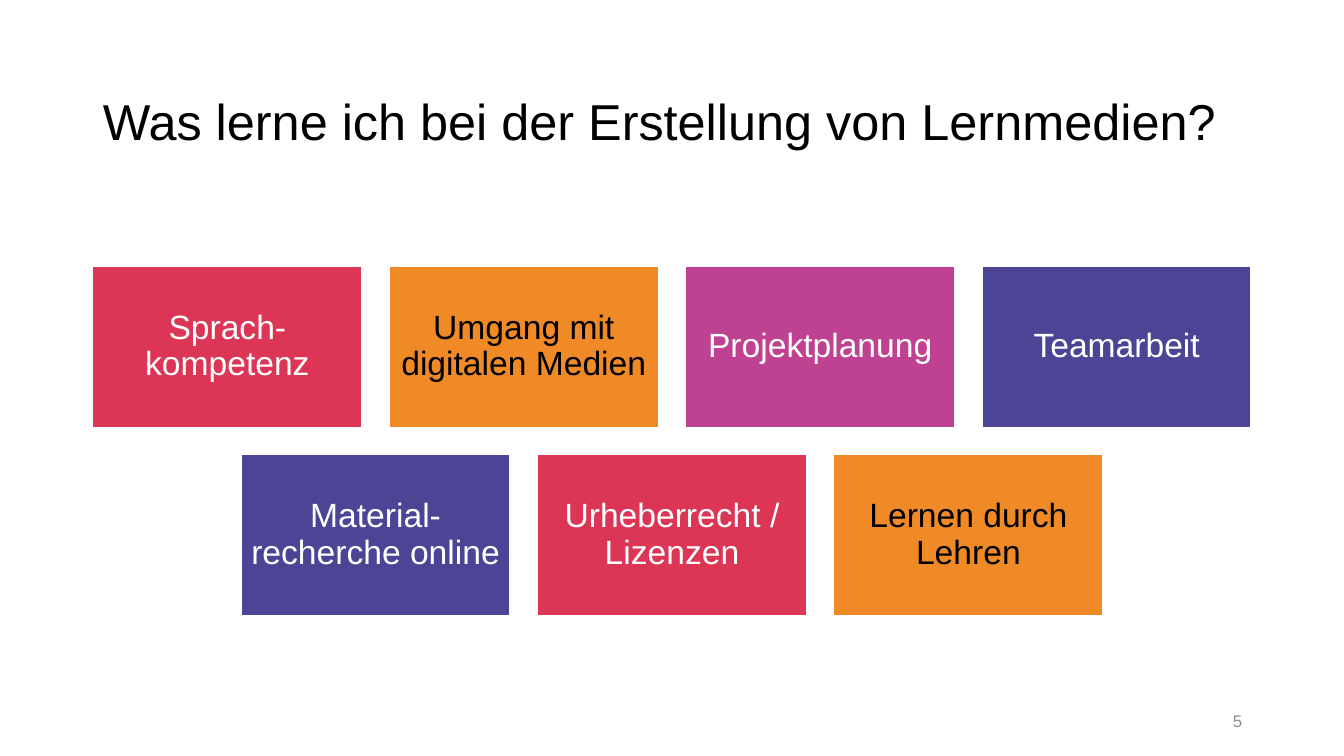
from dataclasses import dataclass

from pptx import Presentation
from pptx.dml.color import RGBColor
from pptx.enum.shapes import MSO_SHAPE
from pptx.enum.text import MSO_ANCHOR, MSO_AUTO_SIZE, PP_ALIGN
from pptx.util import Inches, Pt

RECTANGLE = MSO_SHAPE.RECTANGLE
MIDDLE = MSO_ANCHOR.MIDDLE
NO_AUTO_SIZE = MSO_AUTO_SIZE.NONE
LEFT, CENTER, RIGHT = PP_ALIGN.LEFT, PP_ALIGN.CENTER, PP_ALIGN.RIGHT

FONT = "Arial"
BLACK, WHITE, GREY = "000000", "FFFFFF", "8C8C8C"
RED, ORANGE, MAGENTA, VIOLET = "DC3555", "EF8A26", "BF4191", "4C4596"

SLIDE_WIDTH, SLIDE_HEIGHT = 13.33, 7.5
CARD_WIDTH, CARD_HEIGHT = 2.67, 1.6
GAP = 0.27
GRID_TOP = 2.64


@dataclass(frozen=True)
class Card:
    text: str
    fill: str
    text_color: str = WHITE


CARD_ROWS = [
    [
        Card("Sprach-kompetenz", RED),
        Card("Umgang mit digitalen Medien", ORANGE, BLACK),
        Card("Projektplanung", MAGENTA),
        Card("Teamarbeit", VIOLET),
    ],
    [
        Card("Material-recherche online", VIOLET),
        Card("Urheberrecht / Lizenzen", RED),
        Card("Lernen durch Lehren", ORANGE, BLACK),
    ],
]


def rgb(color: str) -> RGBColor:
    return RGBColor.from_string(color)


def write_text(shape, text: str, size: float, color: str, alignment,
               line_spacing: float = 1.0) -> None:
    frame = shape.text_frame
    frame.word_wrap = True
    frame.auto_size = NO_AUTO_SIZE
    frame.vertical_anchor = MIDDLE
    paragraph = frame.paragraphs[0]
    paragraph.alignment = alignment
    paragraph.line_spacing = line_spacing
    run = paragraph.add_run()
    run.text = text
    run.font.name = FONT
    run.font.size = Pt(size)
    run.font.color.rgb = rgb(color)


def add_title(slide, text: str) -> None:
    title = slide.shapes.title
    title.left, title.top = Inches(0.92), Inches(0.61)
    title.width, title.height = Inches(11.5), Inches(1.24)
    write_text(title, text, 36, BLACK, LEFT, 0.9)


def add_card(slide, card: Card, left: float, top: float) -> None:
    shape = slide.shapes.add_shape(RECTANGLE, Inches(left), Inches(top),
                                   Inches(CARD_WIDTH), Inches(CARD_HEIGHT))
    shape.shadow.inherit = False
    shape.fill.solid()
    shape.fill.fore_color.rgb = rgb(card.fill)
    shape.line.color.rgb = rgb(WHITE)
    shape.line.width = Pt(1)
    frame = shape.text_frame
    frame.margin_left = frame.margin_right = Inches(0.09)
    frame.margin_top = frame.margin_bottom = Inches(0.09)
    write_text(shape, card.text, 24, card.text_color, CENTER, 0.9)


def add_card_row(slide, cards: list[Card], top: float) -> None:
    """Centre one row of cards on the slide."""
    row_width = len(cards) * (CARD_WIDTH + GAP) - GAP
    first_left = (SLIDE_WIDTH - row_width) / 2
    for column, card in enumerate(cards):
        add_card(slide, card, first_left + column * (CARD_WIDTH + GAP), top)


def add_slide_number(slide, number: str) -> None:
    box = slide.shapes.add_textbox(Inches(9.42), Inches(6.95),
                                   Inches(3), Inches(0.4))
    write_text(box, number, 12, GREY, RIGHT)


def main() -> None:
    presentation = Presentation()
    presentation.slide_width = Inches(SLIDE_WIDTH)
    presentation.slide_height = Inches(SLIDE_HEIGHT)
    slide = presentation.slides.add_slide(presentation.slide_layouts[5])

    # Heading
    add_title(slide, "Was lerne ich bei der Erstellung von Lernmedien?")

    # Cards in two centred rows
    for row, cards in enumerate(CARD_ROWS):
        add_card_row(slide, cards, GRID_TOP + row * (CARD_HEIGHT + GAP))

    # Footer
    add_slide_number(slide, "5")

    presentation.save("out.pptx")


if __name__ == "__main__":
    main()
